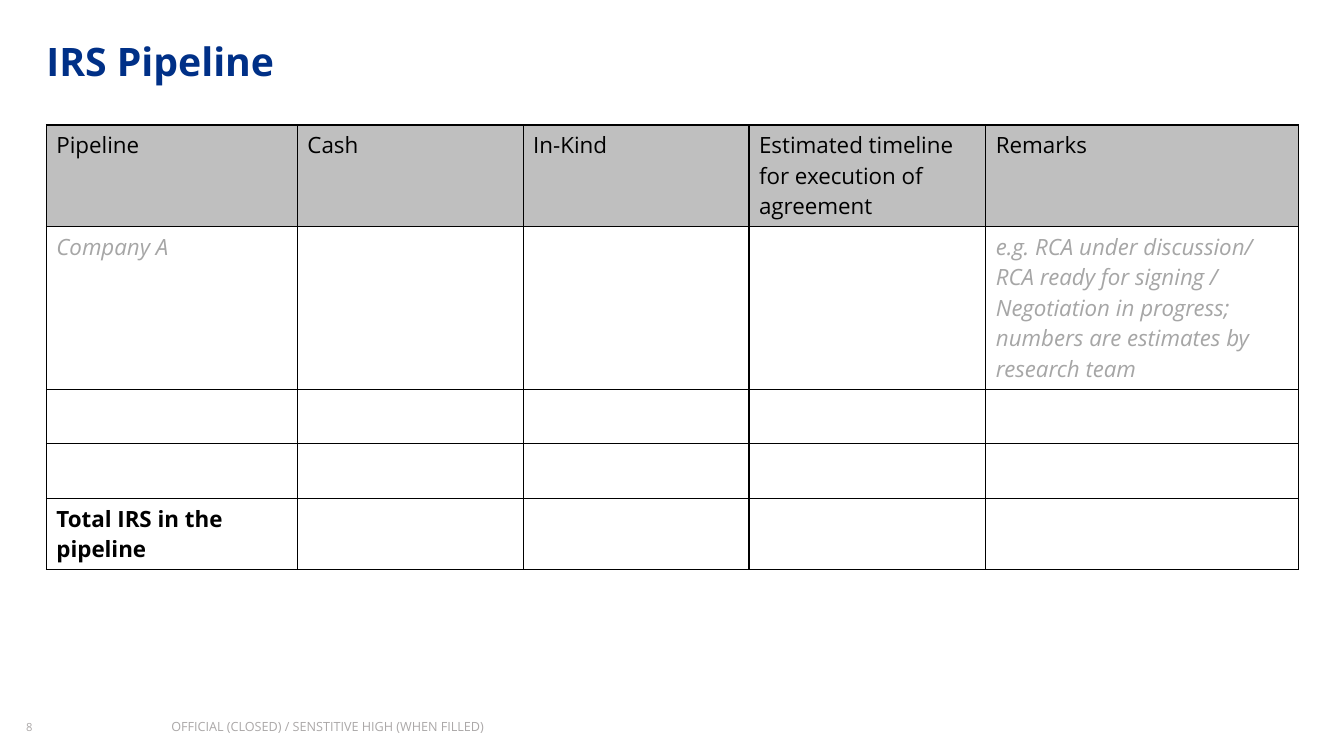
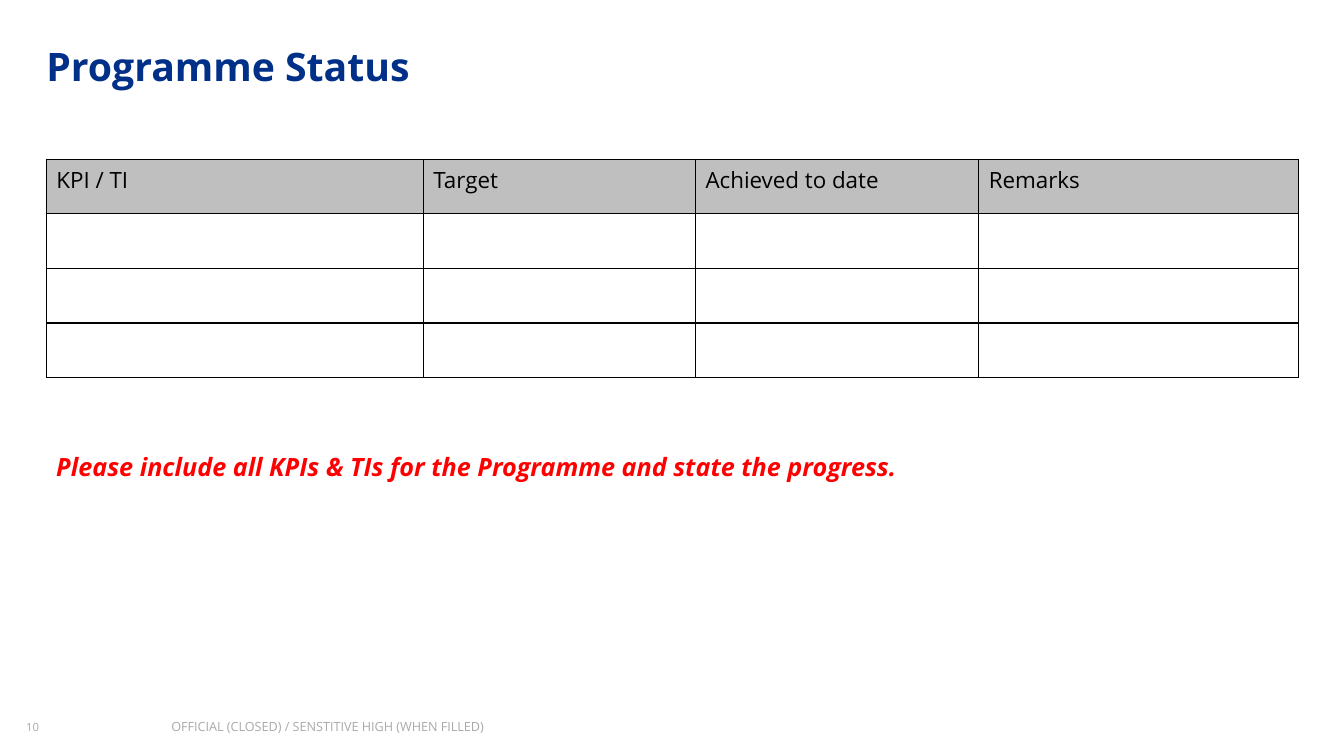
import pptx
import pptx.util
import pptx.dml.color
import pptx.enum.text
from lxml import etree

Pt = pptx.util.Pt
RGBColor = pptx.dml.color.RGBColor
PP_ALIGN = pptx.enum.text.PP_ALIGN
MSO_ANCHOR = pptx.enum.text.MSO_ANCHOR

# Content
FOOTER = "OFFICIAL (CLOSED) / SENSTITIVE HIGH (WHEN FILLED)"
SLIDES = [
    {
        "title": "IRS Pipeline", "number": "8", "title_top": 23, "table_top": 89.3,
        "columns": [("Pipeline", 179.3), ("Cash", 161.3), ("In-Kind", 161.3),
                    ("Estimated timeline for execution of agreement", 169.2),
                    ("Remarks", 223.2)],
        "row_heights": [72.6, 116.1, 39, 39, 50.8],
        "hints": {(1, 0): "Company A",
                  (1, 4): "e.g. RCA under discussion/ RCA ready for signing / "
                          "Negotiation in progress; numbers are estimates by research team"},
        "totals": {(4, 0): "Total IRS in the pipeline"},
    },
    {
        "title": "Programme Status", "number": "10", "title_top": 26.6, "table_top": 113.8,
        "columns": [("KPI / TI", 269.3), ("Target", 194.4),
                    ("Achieved to date", 202.3), ("Remarks", 228.2)],
        "row_heights": [39] * 4,
        "note": "Please include all KPIs & TIs for the Programme and state the progress.",
    },
]

# Shared style
FONT = "Open Sans"
NAVY = RGBColor(0x00, 0x30, 0x87)
BLACK = RGBColor(0x00, 0x00, 0x00)
RED = RGBColor(0xFF, 0x00, 0x00)
HEADER_GREY = RGBColor(0xBF, 0xBF, 0xBF)
HINT_GREY = RGBColor(0xA6, 0xA6, 0xA6)
FOOTER_GREY = RGBColor(0xAB, 0xA8, 0xA8)
LEFT = 33.1
FOOTER_TOP = 513.4
A = "http://schemas.openxmlformats.org/drawingml/2006/main"


def write(tf, text, size, color, bold=False, italic=False, spacing=None):
    p = tf.paragraphs[0]
    p.text = text
    p.alignment = PP_ALIGN.LEFT
    p.line_spacing = spacing
    f = p.font
    f.name, f.size, f.bold, f.italic = FONT, Pt(size), bold, italic
    f.color.rgb = color


def set_frame(tf, inset_x=0, inset_y=0):
    tf.word_wrap = True
    tf.auto_size = pptx.enum.text.MSO_AUTO_SIZE.NONE
    tf.vertical_anchor = MSO_ANCHOR.TOP
    tf.margin_left = tf.margin_right = Pt(inset_x)
    tf.margin_top = tf.margin_bottom = Pt(inset_y)


def add_text(s, box, text, size, color, inset=(0, 0), **style):
    tf = s.shapes.add_textbox(*map(Pt, box)).text_frame
    set_frame(tf, *inset)
    write(tf, text, size, color, **style)


def add_title(s, text, top):
    title = s.shapes.title
    title.left, title.top, title.width, title.height = map(Pt, (LEFT, top, 793.4, 37.4))
    set_frame(title.text_frame)
    write(title.text_frame, text, 28, NAVY, bold=True, spacing=1.1)


def set_borders(cell):
    tc_pr = cell._tc.get_or_add_tcPr()
    for i, side in enumerate(("lnL", "lnR", "lnT", "lnB")):
        ln = etree.Element(f"{{{A}}}{side}", w=str(Pt(1)))
        fill = etree.SubElement(ln, f"{{{A}}}solidFill")
        etree.SubElement(fill, f"{{{A}}}srgbClr", val=str(BLACK))
        tc_pr.insert(i, ln)


def add_grid(s, top, columns, row_heights, hints, totals):
    width = sum(w for _, w in columns)
    table = s.shapes.add_table(len(row_heights), len(columns), Pt(LEFT), Pt(top),
                               Pt(width), Pt(sum(row_heights))).table
    table.first_row = table.horz_banding = False
    for column, (_, w) in zip(table.columns, columns):
        column.width = Pt(w)
    for r, height in enumerate(row_heights):
        table.rows[r].height = Pt(height)
        for c, (heading, _) in enumerate(columns):
            cell = table.cell(r, c)
            if r == 0:
                cell.fill.solid()
                cell.fill.fore_color.rgb = HEADER_GREY
                write(cell.text_frame, heading, 16, BLACK)
            else:
                cell.fill.background()
                if (r, c) in hints:
                    write(cell.text_frame, hints[r, c], 16, HINT_GREY, italic=True)
                elif (r, c) in totals:
                    write(cell.text_frame, totals[r, c], 16, BLACK, bold=True)
            set_borders(cell)


def add_footer(s, number):
    add_text(s, (18.7, FOOTER_TOP, 56.9, 13.7), number, 8, FOOTER_GREY, spacing=1.1)
    add_text(s, (122.4, FOOTER_TOP, 383.8, 13.7), FOOTER, 9, FOOTER_GREY)


def main():
    prs = pptx.Presentation()
    prs.slide_width, prs.slide_height = Pt(960), Pt(540)
    for data in SLIDES:
        s = prs.slides.add_slide(prs.slide_layouts[5])
        add_title(s, data["title"], data["title_top"])
        add_grid(s, data["table_top"], data["columns"], data["row_heights"],
                 data.get("hints", {}), data.get("totals", {}))
        add_footer(s, data["number"])
        if "note" in data:
            add_text(s, (LEFT, 319, 660.2, 28.8), data["note"], 18, RED,
                     inset=(7.2, 3.6), bold=True, italic=True)
    prs.save("out.pptx")


if __name__ == "__main__":
    main()
